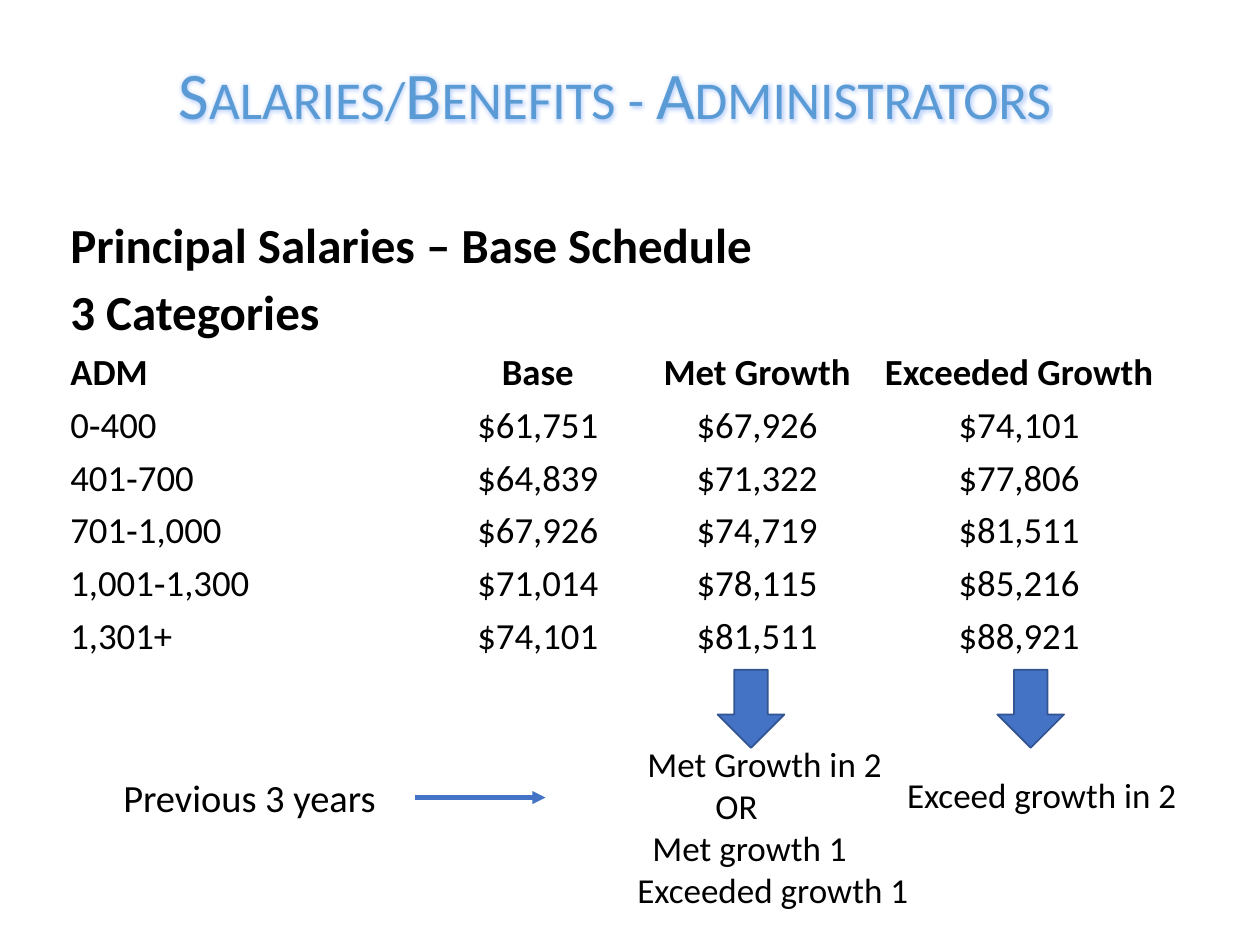
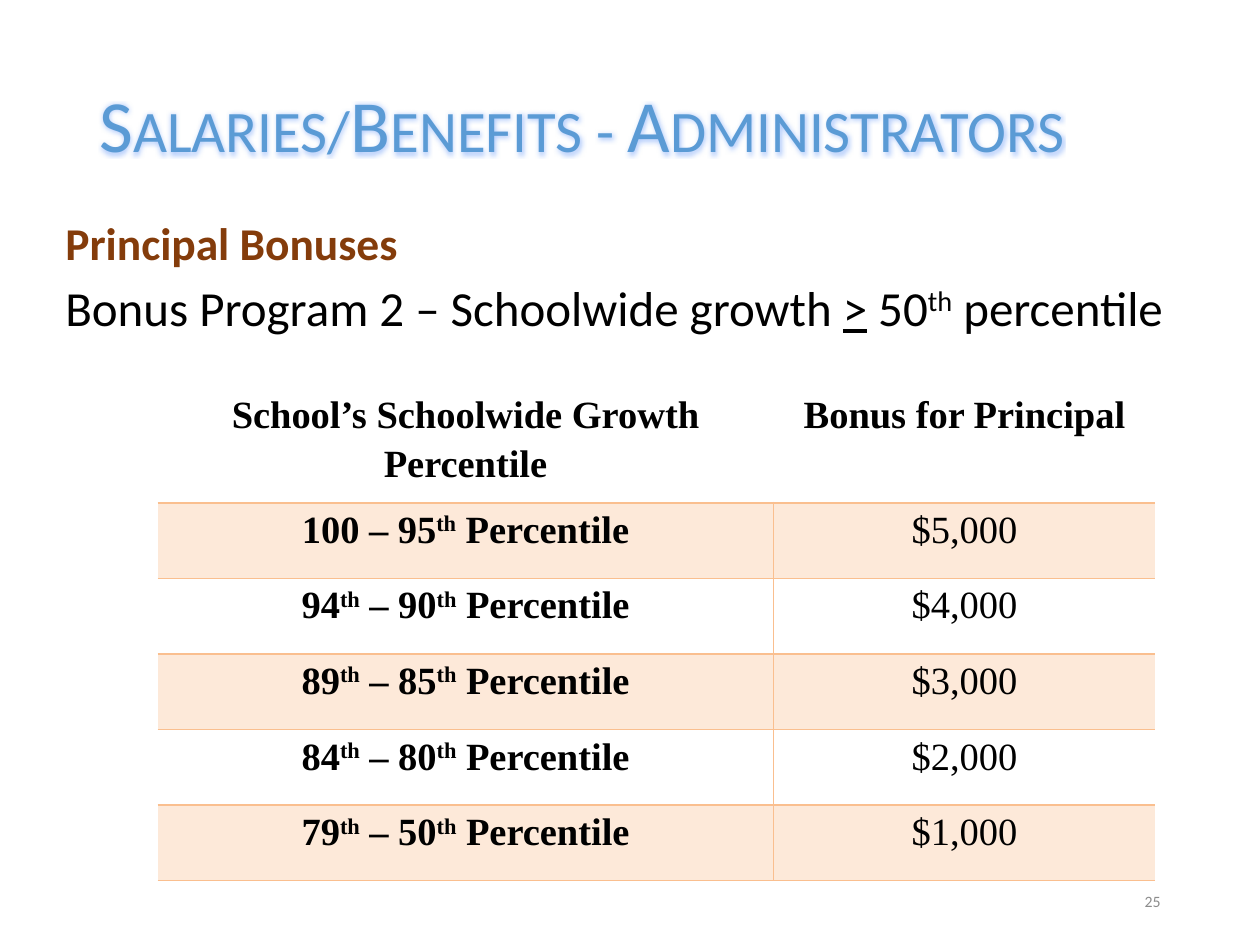
from dataclasses import dataclass

from lxml import etree
from pptx import Presentation
from pptx.dml.color import RGBColor
from pptx.enum.shapes import MSO_CONNECTOR, MSO_SHAPE
from pptx.enum.text import MSO_ANCHOR, PP_ALIGN
from pptx.oxml import parse_xml
from pptx.oxml.ns import nsdecls, qn
from pptx.util import Inches, Pt

LEFT, CENTER, RIGHT = PP_ALIGN.LEFT, PP_ALIGN.CENTER, PP_ALIGN.RIGHT
TOP, MIDDLE = MSO_ANCHOR.TOP, MSO_ANCHOR.MIDDLE
RIGHT_ARROW = MSO_SHAPE.RIGHT_ARROW
STRAIGHT = MSO_CONNECTOR.STRAIGHT


@dataclass(frozen=True)
class Theme:
    font: str = "Calibri"
    table_font: str = "Times New Roman"
    text: str = "000000"
    accent: str = "4472C4"
    accent_edge: str = "325491"
    brown: str = "843C0B"
    muted: str = "8C8C8C"
    rule: str = "FABF8F"
    band: str = "FDE9D9"
    paper: str = "FFFFFF"
    glow: str = "4A86F7"
    title_stops: tuple = ((0, "1F4E79"), (50, "5B9BD5"), (100, "9DC3E6"))
    body_size: int = 28
    subhead_size: int = 26
    schedule_size: int = 21
    years_size: int = 22
    note_size: int = 20
    table_size: int = 22
    number_size: int = 9


@dataclass(frozen=True)
class Box:
    left: float
    top: float
    width: float
    height: float

    def emu(self) -> tuple:
        return tuple(Inches(v) for v in (self.left, self.top, self.width, self.height))


@dataclass(frozen=True)
class Line:
    """One paragraph; pieces split by | are raised (th) or underlined (>)."""
    text: str
    size: float
    bold: bool = False
    color: str = "000000"
    font: str = "Calibri"
    align: PP_ALIGN = LEFT
    spacing: float = 1.0
    before: float = 0
    indent: float = 0
    tabs: tuple = ()


THEME = Theme()
TITLE = "Salaries/Benefits - Administrators"
BODY_TOP = 1.71

# Salary schedule: column centres measured from the text edge
SCHEDULE_TABS = (3.71, 5.45, 7.53)
SCHEDULE_HEAD = ("ADM", "Base", "Met Growth", "Exceeded Growth")
SCHEDULE = (
    ("0‑400", "$61,751", "$67,926", "$74,101"),
    ("401‑700", "$64,839", "$71,322", "$77,806"),
    ("701‑1,000", "$67,926", "$74,719", "$81,511"),
    ("1,001‑1,300", "$71,014", "$78,115", "$85,216"),
    ("1,301+", "$74,101", "$81,511", "$88,921"),
)
MET_RULES = (
    ("Met Growth in 2", 0.46),
    ("OR", 1.0),
    ("Met growth 1", 0.5),
    ("Exceeded growth 1", 0.38),
)
ARROW_LEFTS = (5.65, 7.87)

# Bonus table
BONUS_HEAD = ("School’s Schoolwide Growth Percentile", "Bonus for Principal")
BONUSES = (
    ("100 – 95|th| Percentile", "$5,000"),
    ("94|th| – 90|th| Percentile", "$4,000"),
    ("89|th| – 85|th| Percentile", "$3,000"),
    ("84|th| – 80|th| Percentile", "$2,000"),
    ("79|th| – 50|th| Percentile", "$1,000"),
)
BONUS_COLS = (4.89, 3.03)
HEAD_HEIGHT, ROW_HEIGHT = 0.91, 0.6


def rgb(color: str) -> RGBColor:
    return RGBColor.from_string(color)


def write_line(p, line: Line) -> None:
    p.alignment = line.align
    p.line_spacing = line.spacing
    p.space_before = Pt(line.before)
    f = p.font
    f.name, f.size, f.bold = line.font, Pt(line.size), line.bold
    f.color.rgb = rgb(line.color)
    pPr = p._p.get_or_add_pPr()
    if line.indent:
        pPr.set("marL", str(Inches(line.indent)))
    if line.tabs:
        stops = etree.Element(qn("a:tabLst"))
        for pos in line.tabs:
            etree.SubElement(stops, qn("a:tab"), pos=str(Inches(pos)), algn="ctr")
        pPr.find(qn("a:defRPr")).addprevious(stops)
    for piece in line.text.split("|"):
        r = p.add_run()
        r.text = piece
        if piece == "th":
            r._r.get_or_add_rPr().set("baseline", "30000")
        elif piece == ">":
            r.font.underline = True


def write_lines(tf, lines: list[Line]) -> None:
    for i, line in enumerate(lines):
        write_line(tf.add_paragraph() if i else tf.paragraphs[0], line)


def add_text(slide, box: Box, lines: list[Line], anchor=TOP, wrap: bool = True):
    tf = slide.shapes.add_textbox(*box.emu()).text_frame
    tf.word_wrap = wrap
    tf.vertical_anchor = anchor
    write_lines(tf, lines)
    return tf


def add_title(slide, box: Box, size: float, wrap: bool = True) -> None:
    """Small-cap title with a gradient fill and a soft glow."""
    tf = add_text(slide, box, [Line(TITLE, size, align=CENTER)], wrap=wrap)
    rPr = tf.paragraphs[0].runs[0]._r.get_or_add_rPr()
    rPr.set("cap", "small")
    stops = "".join(
        f'<a:gs pos="{pos * 1000}"><a:srgbClr val="{color}"/></a:gs>'
        for pos, color in THEME.title_stops
    )
    rPr.append(parse_xml(
        f'<a:gradFill {nsdecls("a")}><a:gsLst>{stops}</a:gsLst>'
        '<a:lin ang="5400000" scaled="0"/></a:gradFill>'
    ))
    rPr.append(parse_xml(
        f'<a:effectLst {nsdecls("a")}><a:glow rad="{Pt(4)}">'
        f'<a:srgbClr val="{THEME.glow}"><a:alpha val="40000"/></a:srgbClr>'
        '</a:glow></a:effectLst>'
    ))


def body_line(text: str, size: float = THEME.body_size, **style) -> Line:
    return Line(text, size, spacing=0.9, before=7.5, **style)


def add_down_arrow(slide, left: float) -> None:
    sp = slide.shapes.add_shape(RIGHT_ARROW, *Box(left, 5.36, 0.62, 0.53).emu())
    sp.rotation = 90
    sp.shadow.inherit = False
    sp.fill.solid()
    sp.fill.fore_color.rgb = rgb(THEME.accent)
    sp.line.color.rgb = rgb(THEME.accent_edge)
    sp.line.width = Pt(1)


def add_arrow_line(slide, x1: float, x2: float, y: float) -> None:
    cn = slide.shapes.add_connector(
        STRAIGHT, Inches(x1), Inches(y), Inches(x2), Inches(y))
    cn.line.color.rgb = rgb(THEME.accent)
    cn.line.width = Pt(2.5)
    etree.SubElement(cn.line._get_or_add_ln(), qn("a:tailEnd"), type="triangle")
    etree.SubElement(cn._element.spPr, qn("a:effectLst"))


def set_borders(cell, widths: dict[str, float]) -> None:
    """Rule the sides named in widths (points) and clear the others."""
    tcPr = cell._tc.get_or_add_tcPr()
    for i, side in enumerate("LRTB"):
        width = widths.get(side, 0)
        ln = etree.Element(qn(f"a:ln{side}"), w=str(Pt(width)))
        if width:
            fill = etree.SubElement(ln, qn("a:solidFill"))
            etree.SubElement(fill, qn("a:srgbClr"), val=THEME.rule)
        else:
            etree.SubElement(ln, qn("a:noFill"))
        tcPr.insert(i, ln)


def add_bonus_table(slide, left: float, top: float) -> None:
    rows = (BONUS_HEAD,) + BONUSES
    height = HEAD_HEIGHT + ROW_HEIGHT * len(BONUSES)
    box = Box(left, top, sum(BONUS_COLS), height)
    table = slide.shapes.add_table(len(rows), len(BONUS_COLS), *box.emu()).table
    table.first_row = table.horz_banding = False
    for col, width in zip(table.columns, BONUS_COLS):
        col.width = Inches(width)
    for i, values in enumerate(rows):
        table.rows[i].height = Inches(ROW_HEIGHT if i else HEAD_HEIGHT)
        for j, value in enumerate(values):
            cell = table.cell(i, j)
            cell.margin_left = cell.margin_right = Inches(0.07)
            cell.margin_top = cell.margin_bottom = 0
            cell.fill.solid()
            cell.fill.fore_color.rgb = rgb(THEME.band if i % 2 else THEME.paper)
            widths = {"B": 1 if i else 1.5}
            if i:
                widths["T"] = 1.5 if i == 1 else 1
                widths["L" if j else "R"] = 1
            set_borders(cell, widths)
            write_lines(cell.text_frame, [Line(
                value, THEME.table_size, bold=i == 0 or j == 0,
                font=THEME.table_font, align=CENTER, spacing=1.15)])


def build_salaries(slide) -> None:
    # Headings and schedule
    lines = [body_line(text, bold=True)
             for text in ("Principal Salaries – Base Schedule", "3 Categories")]
    for i, row in enumerate((SCHEDULE_HEAD,) + SCHEDULE):
        lines.append(body_line("\t".join(row), THEME.schedule_size,
                               bold=i == 0, tabs=SCHEDULE_TABS))
    add_text(slide, Box(0.46, BODY_TOP, 9.08, 3.8), lines)

    # Growth rules under the columns
    add_text(slide, Box(4.58, 5.84, 2.75, 1.45),
             [Line(text, THEME.note_size, indent=indent) for text, indent in MET_RULES])
    add_text(slide, Box(0.88, 6.09, 2.42, 0.47),
             [Line("Previous 3 years", THEME.years_size)])
    add_arrow_line(slide, 3.29, 4.33, 6.33)
    for left in ARROW_LEFTS:
        add_down_arrow(slide, left)
    add_text(slide, Box(6.81, 6.09, 2.75, 0.44),
             [Line("Exceed growth in 2", THEME.note_size, indent=0.29)])
    add_title(slide, Box(1.17, 0.37, 7.42, 0.74), 38)


def build_bonuses(slide) -> None:
    add_text(slide, Box(0.42, BODY_TOP, 9.08, 1.2), [
        body_line("Principal Bonuses", THEME.subhead_size, bold=True, color=THEME.brown),
        body_line("Bonus Program 2 – Schoolwide growth |>| 50|th| percentile"),
    ])
    add_bonus_table(slide, 1.25, 3.08)
    add_title(slide, Box(0.58, 0.58, 8.08, 0.81), 42, wrap=False)

    # Slide number
    add_text(slide, Box(7.06, 6.95, 2.25, 0.4),
             [Line("25", THEME.number_size, color=THEME.muted, align=RIGHT)], MIDDLE)


def main() -> None:
    prs = Presentation()
    prs.slide_width, prs.slide_height = Inches(10), Inches(7.5)
    blank = prs.slide_layouts[6]
    for build in (build_salaries, build_bonuses):
        build(prs.slides.add_slide(blank))
    prs.save("out.pptx")


if __name__ == "__main__":
    main()
